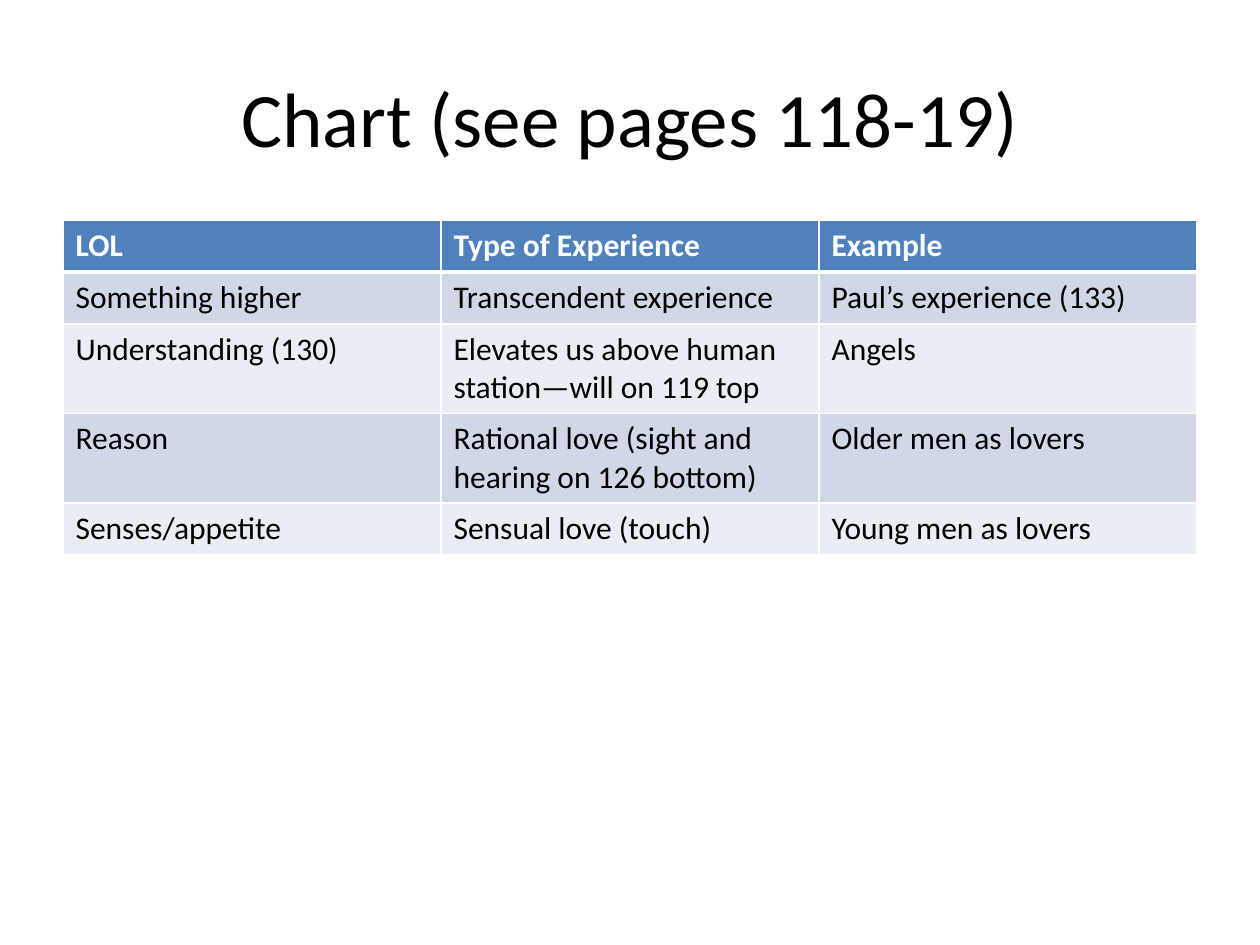
from lxml import etree
from pptx import Presentation
from pptx.dml.color import RGBColor
from pptx.enum import text as t
from pptx.oxml import ns
from pptx.util import Inches, Pt

HUES = {"head": "4F81BD", "odd": "D0D8E8", "even": "E9EDF4",
        "white": "FFFFFF", "black": "000000"}
ROWS = [
    ("LOL", "Type of Experience", "Example"),
    ("Something higher", "Transcendent experience", "Paul’s experience (133)"),
    ("Understanding (130)", "Elevates us above human station—will on 119 top", "Angels"),
    ("Reason", "Rational love (sight and hearing on 126 bottom)", "Older men as lovers"),
    ("Senses/appetite", "Sensual love (touch)", "Young men as lovers"),
]


def write(frame, words, size=18, hue="black", bold=False, align=t.PP_ALIGN.LEFT):
    para = frame.paragraphs[0]
    para.alignment = align
    run = para.add_run()
    run.text = words
    run.font.name = "Calibri"
    run.font.size = Pt(size)
    run.font.bold = bold
    run.font.color.rgb = RGBColor.from_string(HUES[hue])


def edge(cell, **widths):
    """Draw white cell borders; widths are points keyed by side L, R, T, B."""
    props = cell._tc.get_or_add_tcPr()
    for spot, side in enumerate("LRTB"):
        line = etree.Element(ns.qn(f"a:ln{side}"), w=str(Pt(widths.get(side, 1))))
        fill = etree.SubElement(line, ns.qn("a:solidFill"))
        etree.SubElement(fill, ns.qn("a:srgbClr"), val=HUES["white"])
        props.insert(spot, line)


def head(slide, left, top, width, height):
    title = slide.shapes.title
    title.left, title.top, title.width, title.height = left, top, width, height
    title.text_frame.vertical_anchor = t.MSO_ANCHOR.MIDDLE
    write(title.text_frame, "Chart (see pages 118-19)", size=44,
          align=t.PP_ALIGN.CENTER)


def grid(slide, left, top, width, row):
    count = len(ROWS[0])
    table = slide.shapes.add_table(len(ROWS), count, left, top, width,
                                   row * len(ROWS)).table
    for col in table.columns:
        col.width = width // count
    for r, words in enumerate(ROWS):
        table.rows[r].height = row
        first = r == 0
        band = "head" if first else ("odd" if r % 2 else "even")
        for c, word in enumerate(words):
            cell = table.cell(r, c)
            cell.fill.solid()
            cell.fill.fore_color.rgb = RGBColor.from_string(HUES[band])
            edge(cell, T=3 if r == 1 else 1, B=3 if first else 1)
            write(cell.text_frame, word, hue="white" if first else "black",
                  bold=first)


def main():
    deck = Presentation()
    deck.slide_width, deck.slide_height = Inches(10), Inches(7.5)
    slide = deck.slides.add_slide(deck.slide_layouts[5])
    head(slide, Inches(0.5), Inches(0.3), Inches(9), Inches(1.25))
    grid(slide, Inches(0.5), Inches(1.75), Inches(9), Inches(0.41))
    deck.save("out.pptx")


if __name__ == "__main__":
    main()
